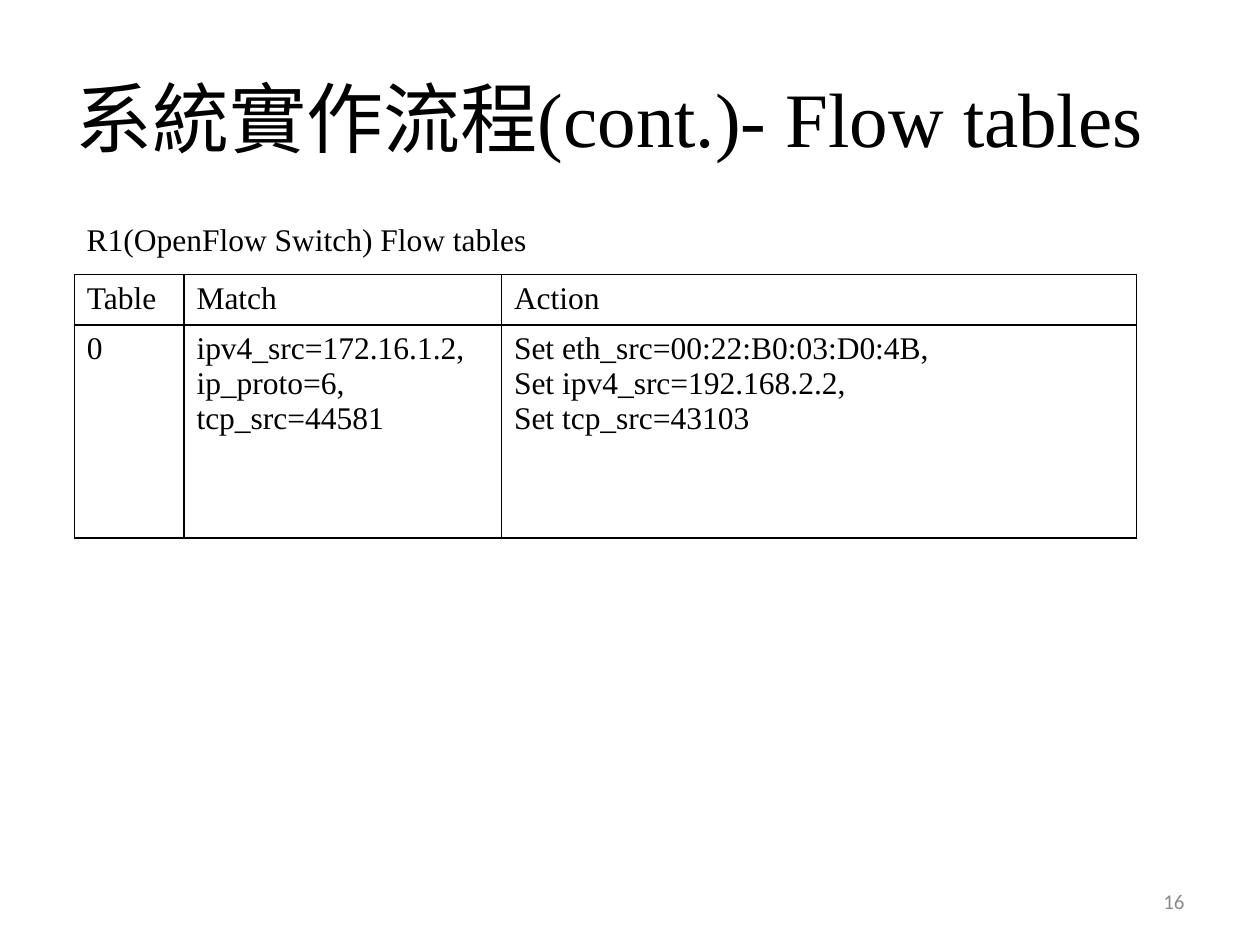
import pptx
import pptx.util
import pptx.dml.color
import pptx.enum.text
import pptx.oxml
import pptx.oxml.ns
from dataclasses import dataclass

Inches = pptx.util.Inches
Pt = pptx.util.Pt
Align = pptx.enum.text.PP_ALIGN
Anchor = pptx.enum.text.MSO_ANCHOR


@dataclass
class Theme:
    ink: str = "000000"
    grey: str = "8C8C8C"
    paper: str = "FFFFFF"
    serif: str = "Times New Roman"
    sans: str = "Calibri"
    head: int = 44
    body: int = 18
    foot: int = 12
    rule: int = 1


class Deck:
    def __init__(self, theme):
        self.theme = theme
        self.file = pptx.Presentation()
        self.file.slide_width = Inches(10)
        self.file.slide_height = Inches(7.5)
        self.slide = self.file.slides.add_slide(self.file.slide_layouts[6])

    def fill_text(self, frame, lines, size, font=None, color=None, align=Align.LEFT):
        for i, line in enumerate(lines):
            para = frame.paragraphs[0] if i == 0 else frame.add_paragraph()
            para.alignment = align
            run = para.add_run()
            run.text = line
            run.font.size = Pt(size)
            run.font.name = font or self.theme.serif
            run.font.color.rgb = pptx.dml.color.RGBColor.from_string(
                color or self.theme.ink)

    def text(self, area, line, size, anchor=Anchor.MIDDLE, wrap=True, **style):
        box = self.slide.shapes.add_textbox(*map(Inches, area))
        frame = box.text_frame
        frame.word_wrap = wrap
        frame.vertical_anchor = anchor
        self.fill_text(frame, [line], size, **style)

    def border(self, cell):
        props = cell._tc.get_or_add_tcPr()
        space = pptx.oxml.ns.nsdecls("a")
        for i, side in enumerate(("lnL", "lnR", "lnT", "lnB")):
            props.insert(i, pptx.oxml.parse_xml(
                f'<a:{side} {space} w="{Pt(self.theme.rule)}"><a:solidFill>'
                f'<a:srgbClr val="{self.theme.ink}"/></a:solidFill></a:{side}>'))

    def table(self, left, top, widths, heights, rows):
        area = map(Inches, (left, top, sum(widths), sum(heights)))
        grid = self.slide.shapes.add_table(len(rows), len(widths), *area).table
        grid.first_row = grid.horz_banding = False
        for col, width in zip(grid.columns, widths):
            col.width = Inches(width)
        for row, height, cells in zip(grid.rows, heights, rows):
            row.height = Inches(height)
            for cell, lines in zip(row.cells, cells):
                cell.fill.solid()
                cell.fill.fore_color.rgb = pptx.dml.color.RGBColor.from_string(
                    self.theme.paper)
                self.border(cell)
                self.fill_text(cell.text_frame, lines, self.theme.body)


def main():
    theme = Theme()
    deck = Deck(theme)
    left = 0.59

    # Title and page number
    deck.text((0.5, 0.3, 9, 1.25), "系統實作流程(cont.)- Flow tables", theme.head)
    deck.text((7.17, 6.95, 2.33, 0.4), "16", theme.foot,
              font=theme.sans, color=theme.grey, align=Align.RIGHT)

    # Flow table with its caption
    deck.text((left, 1.7, 3.73, 0.4), "R1(OpenFlow Switch) Flow tables",
              theme.body, anchor=Anchor.TOP, wrap=False)
    rows = [
        (["Table"], ["Match"], ["Action"]),
        (["0"],
         ["ipv4_src=172.16.1.2,", "ip_proto=6,", "tcp_src=44581"],
         ["Set eth_src=00:22:B0:03:D0:4B,", "Set ipv4_src=192.168.2.2,",
          "Set tcp_src=43103"]),
    ]
    deck.table(left, 2.18, (0.87, 2.52, 5.04), (0.4, 1.69), rows)

    deck.file.save("out.pptx")


if __name__ == "__main__":
    main()
